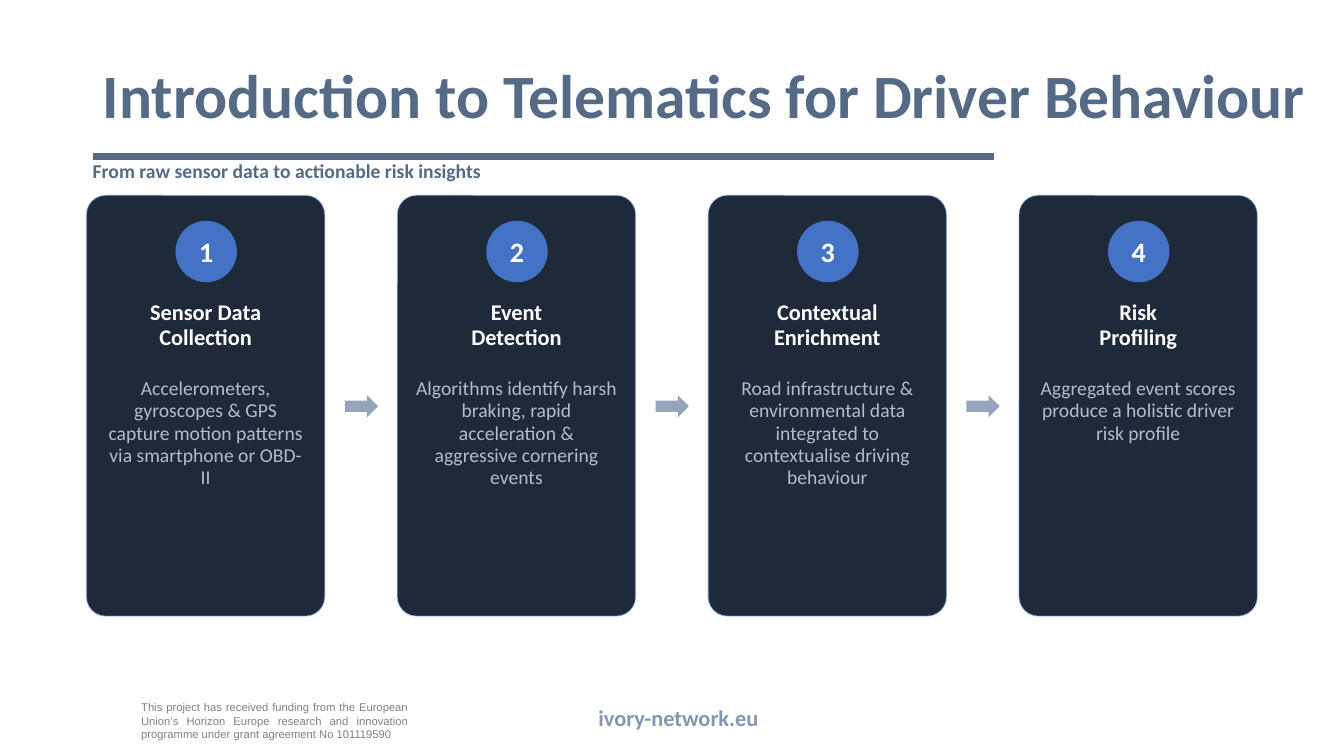
import pptx
import pptx.dml.color
import pptx.enum.shapes
import pptx.enum.text
import pptx.oxml.ns
import pptx.util
from lxml import etree

Inches, Pt = pptx.util.Inches, pptx.util.Pt
Color = pptx.dml.color.RGBColor
Kind = pptx.enum.shapes.MSO_SHAPE
Align = pptx.enum.text.PP_ALIGN
Anchor = pptx.enum.text.MSO_ANCHOR
Fit = pptx.enum.text.MSO_AUTO_SIZE
qn = pptx.oxml.ns.qn

SLATE = Color(0x55, 0x6A, 0x85)
NAVY = Color(0x1E, 0x2A, 0x3A)
BLUE = Color(0x44, 0x72, 0xC4)
WHITE = Color(0xFF, 0xFF, 0xFF)
MIST = Color(0xB0, 0xBE, 0xC5)
ARROW = Color(0x94, 0xA5, 0xBB)
STEEL = Color(0x84, 0x96, 0xB0)
GRAY = Color(0x80, 0x80, 0x80)

STEPS = [
    ("Sensor Data\nCollection",
     "Accelerometers, gyroscopes & GPS capture motion patterns via smartphone or OBD-II"),
    ("Event\nDetection",
     "Algorithms identify harsh braking, rapid acceleration & aggressive cornering events"),
    ("Contextual\nEnrichment",
     "Road infrastructure & environmental data integrated to contextualise driving behaviour"),
    ("Risk\nProfiling",
     "Aggregated event scores produce a holistic driver risk profile"),
]
FIRST, PITCH = 0.86, 3.083


def write(frame, text, size, color, bold=False, align=Align.LEFT,
          lead=None, face="Calibri"):
    frame.text = text
    for para in frame.paragraphs:
        para.alignment = align
        if lead:
            para.line_spacing = lead
        font = para.font
        font.name, font.size, font.bold = face, Pt(size), bold
        font.color.rgb = color


def inset(frame, side, top=0):
    frame.margin_left = frame.margin_right = Inches(side)
    frame.margin_top = frame.margin_bottom = Inches(top)


def add_text(slide, box, text, size, color, side=0, **style):
    frame = slide.shapes.add_textbox(*map(Inches, box)).text_frame
    frame.word_wrap = True
    inset(frame, side)
    write(frame, text, size, color, **style)
    return frame


def add_shape(slide, kind, box, fill):
    shape = slide.shapes.add_shape(kind, *map(Inches, box))
    shape.shadow.inherit = False
    shape.fill.solid()
    shape.fill.fore_color.rgb = fill
    shape.line.fill.background()
    return shape


def add_card(slide, left):
    card = add_shape(slide, Kind.ROUNDED_RECTANGLE, (left, 1.94, 2.36, 4.17), NAVY)
    card.adjustments[0] = 0.08
    card.line.color.rgb = BLUE
    card.line.width = Pt(1)
    tint = card.line._ln.find(".//" + qn("a:srgbClr"))
    etree.SubElement(tint, qn("a:alpha")).set("val", "40000")


def add_badge(slide, left, number):
    badge = add_shape(slide, Kind.OVAL, (left, 2.19, 0.61, 0.61), BLUE)
    frame = badge.text_frame
    frame.word_wrap = False
    frame.vertical_anchor = Anchor.MIDDLE
    inset(frame, 0)
    write(frame, str(number), 20, WHITE, bold=True, align=Align.CENTER)


def add_step(slide, index, head, body):
    left = FIRST + index * PITCH
    add_card(slide, left)
    add_badge(slide, left + 0.88, index + 1)
    add_text(slide, (left + 0.11, 2.97, 2.14, 0.69), head, 16, WHITE,
             bold=True, align=Align.CENTER, lead=Pt(18))
    add_text(slide, (left + 0.14, 3.74, 2.08, 2.08), body, 14, MIST,
             side=0.04, align=Align.CENTER, lead=Pt(16))
    if index < len(STEPS) - 1:
        add_shape(slide, Kind.RIGHT_ARROW, (left + 2.56, 3.92, 0.33, 0.22), ARROW)


def add_title(slide, text):
    title = slide.shapes.title
    title.left, title.top, title.width, title.height = map(
        Inches, (0.92, 0.4, 12.4, 1.15))
    frame = title.text_frame
    frame.auto_size = Fit.NONE
    frame.vertical_anchor = Anchor.MIDDLE
    write(frame, text, 44, SLATE, bold=True, lead=0.9)


def add_rule(slide):
    rule = slide.shapes.add_connector(
        pptx.enum.shapes.MSO_CONNECTOR.STRAIGHT,
        Inches(0.92), Inches(1.55), Inches(9.86), Inches(1.55))
    rule.line.color.rgb = SLATE
    rule.line.width = Pt(5)
    etree.SubElement(rule._element.spPr, qn("a:effectLst"))


def add_footer(slide):
    add_text(slide, (1.4, 6.95, 2.65, 0.4),
             "This project has received funding from the European Union’s Horizon "
             "Europe research and innovation programme under grant agreement No 101119590",
             8, GRAY, align=Align.JUSTIFY, face="Arial")
    site = add_text(slide, (4.48, 6.92, 4.5, 0.4), "ivory-network.eu", 16, STEEL,
                    bold=True, align=Align.CENTER)
    site.vertical_anchor = Anchor.MIDDLE


def main():
    deck = pptx.Presentation()
    deck.slide_width, deck.slide_height = Inches(13.33), Inches(7.5)
    slide = deck.slides.add_slide(deck.slide_layouts[5])
    add_title(slide, "Introduction to Telematics for Driver Behaviour")
    add_rule(slide)
    add_footer(slide)
    for index, (head, body) in enumerate(STEPS):
        add_step(slide, index, head, body)
    add_text(slide, (0.92, 1.58, 11.53, 0.39),
             "From raw sensor data to actionable risk insights", 14, SLATE, bold=True)
    deck.save("out.pptx")


if __name__ == "__main__":
    main()
